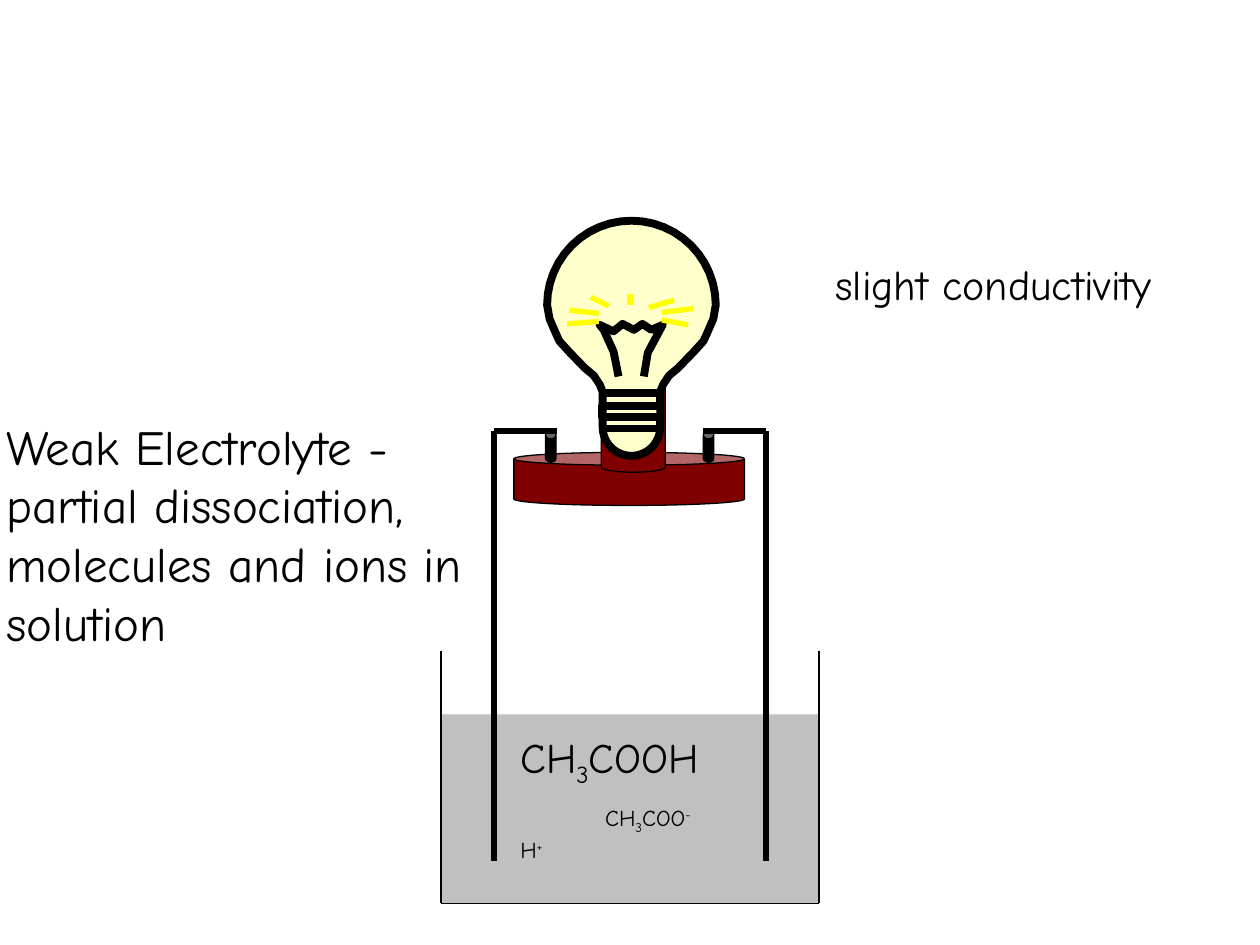
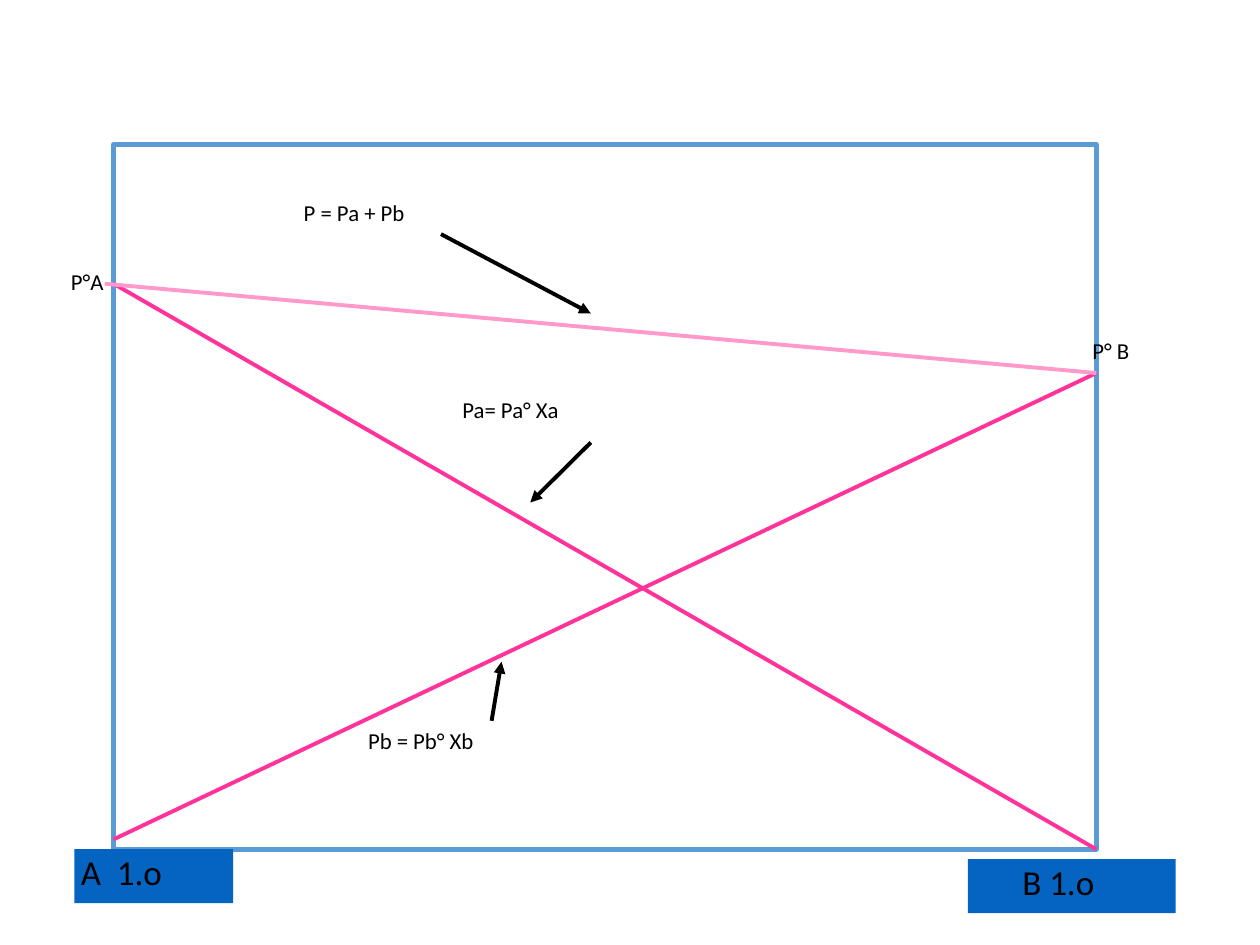
"""Build two chemistry slides: a weak electrolyte cell and a vapour pressure diagram."""
from math import cos, pi, sin

from lxml.etree import SubElement
from pptx import Presentation
from pptx.dml.color import RGBColor
from pptx.enum.shapes import MSO_CONNECTOR, MSO_SHAPE
from pptx.enum.text import MSO_ANCHOR, PP_ALIGN
from pptx.oxml.ns import qn
from pptx.util import Cm, Pt

BLACK = RGBColor(0x00, 0x00, 0x00)
MAROON = RGBColor(0x80, 0x00, 0x00)
GLASS = RGBColor(0xFF, 0xFF, 0xCC)
LIQUID = RGBColor(0xC0, 0xC0, 0xC0)
GLOW = RGBColor(0xFF, 0xFF, 0x00)
FRAME_BLUE = RGBColor(0x5B, 0x9B, 0xD5)
LABEL_BLUE = RGBColor(0x05, 0x63, 0xC1)
PINK = RGBColor(0xFF, 0x33, 0x99)
LIGHT_PINK = RGBColor(0xFF, 0x99, 0xCC)

CELL_FONT = "Comic Neue"
DIAGRAM_FONT = "Calibri"
INSET = 0.13
SUB, SUPER = -25, 30

CANS = [
    ((10.36, 9.12, 4.65, 1.07), 0.26, MAROON),
    ((12.12, 7.54, 1.29, 1.98), 0.2, MAROON),
    ((11.0, 8.69, 0.21, 0.63), 0.16, BLACK),
    ((14.18, 8.69, 0.21, 0.63), 0.16, BLACK),
]
BULB_CENTRE = 12.73
BULB_TOP = (6.15, 1.7)
BULB_FOOT = (8.61, 0.58)
BULB_NECK = [(1.65, 6.43), (1.52, 6.73), (1.45, 6.88), (1.24, 7.11),
             (0.94, 7.42), (0.76, 7.57), (0.64, 7.75), (0.58, 7.9)]
FILAMENT = [(12.47, 7.59), (12.37, 7.09), (12.17, 6.65), (12.09, 6.55),
            (12.37, 6.68), (12.55, 6.53), (12.78, 6.65), (12.95, 6.53),
            (13.13, 6.65), (13.36, 6.55), (13.06, 7.11), (12.98, 7.59)]
THREAD_LEVELS = [7.92, 8.18, 8.41, 8.64]
THREAD_SIDES = (12.14, 13.31)
RAYS = [
    (13.34, 6.45, 13.87, 6.55), (13.34, 6.3, 13.97, 6.22),
    (12.07, 6.48, 11.43, 6.53), (12.07, 6.32, 11.48, 6.25),
    (12.27, 6.17, 11.91, 5.99), (12.7, 6.15, 12.7, 5.92),
    (13.08, 6.2, 13.59, 6.05),
]
BEAKER_LEFT, BEAKER_RIGHT = 8.89, 16.51
BEAKER_TOP, LIQUID_TOP, BEAKER_BOTTOM = 13.13, 14.4, 18.21
WIRE_TOP, WIRE_BOTTOM = 8.69, 17.35
WIRES = [(14.17, 15.44), (11.23, 9.96)]
CELL_TEXTS = [
    ((10.36, 14.61, 4.32, 1.57), 24, False, [[("CH", 0), ("3", SUB), ("COOH", 0)]]),
    ((12.07, 16.08, 2.24, 0.97), 13, False,
     [[("CH", 0), ("3", SUB), ("COO", 0), ("-", SUPER)]]),
    ((10.36, 16.71, 0.79, 0.89), 13, False, [[("H", 0), ("+", SUPER)]]),
    ((0, 8.26, 10.16, 5.77), 28, True,
     [[("Weak Electrolyte -", 0)], [("partial dissociation,", 0)],
      [("molecules and ions in solution", 0)]]),
    ((16.71, 5.08, 7.57, 1.42), 24, False, [[("slight conductivity", 0)]]),
]

PLOT = (2.29, 2.92, 19.81, 14.2)
PRESSURES = [
    ((2.29, 5.72, 22.1, 17.12), PINK),
    ((22.1, 7.52, 2.29, 16.92), PINK),
    ((2.11, 5.72, 22.1, 7.52), LIGHT_PINK),
]
AXIS_LABELS = [
    ((1.5, 17.12, 3.2, 1.09), "A  1.o", INSET),
    ((19.51, 17.32, 4.19, 1.09), "B 1.o", 1.1),
]
DIAGRAM_TEXTS = [
    ((1.3, 5.33, 0.94, 0.79), "P°A", False),
    ((21.89, 6.73, 2.79, 0.79), "P° B", True),
    ((7.29, 14.58, 6.2, 0.79), "Pb = Pb° Xb", True),
    ((9.09, 7.92, 6.6, 0.79), " Pa= Pa° Xa", True),
    ((5.89, 3.94, 9.6, 0.79), " P = Pa + Pb", True),
]
ARROWS = [(9.91, 14.53, 10.11, 13.34), (11.91, 8.92, 10.69, 10.13),
          (8.89, 4.72, 11.91, 6.32)]


def paint(shape, fill=None, line=None, width=0.75):
    shape.shadow.inherit = False
    if fill is None:
        shape.fill.background()
    else:
        shape.fill.solid()
        shape.fill.fore_color.rgb = fill
    if line is None:
        shape.line.fill.background()
    else:
        shape.line.color.rgb = line
        shape.line.width = Pt(width)


def add_preset(page, kind, place, **look):
    shape = page.shapes.add_shape(kind, *map(Cm, place))
    paint(shape, **look)
    return shape


def add_line(page, ends, color, width, arrow=False):
    line = page.shapes.add_connector(MSO_CONNECTOR.STRAIGHT, *map(Cm, ends))
    line.line.color.rgb = color
    line.line.width = Pt(width)
    properties = line._element.spPr
    if arrow:
        SubElement(properties.find(qn("a:ln")), qn("a:tailEnd"), type="triangle")
    SubElement(properties, qn("a:effectLst"))


def add_outline(page, contours, close, **look):
    first, *others = [[(Cm(x), Cm(y)) for x, y in contour] for contour in contours]
    builder = page.shapes.build_freeform(*first[0])
    builder.add_line_segments(first[1:], close=close)
    for contour in others:
        builder.move_to(*contour[0])
        builder.add_line_segments(contour[1:], close=close)
    paint(builder.convert_to_shape(), **look)


def write(shape, paragraphs, font, size, wrap=True, spacing=None, left=INSET):
    frame = shape.text_frame
    frame.word_wrap = wrap
    frame.vertical_anchor = MSO_ANCHOR.TOP
    frame.margin_left = Cm(left)
    frame.margin_right = frame.margin_top = frame.margin_bottom = Cm(INSET)
    for index, spans in enumerate(paragraphs):
        para = frame.add_paragraph() if index else frame.paragraphs[0]
        para.alignment = PP_ALIGN.LEFT
        para.line_spacing = spacing
        for text, baseline in spans:
            span = para.add_run()
            span.text = text
            span.font.name = font
            span.font.size = Pt(size)
            span.font.color.rgb = BLACK
            if baseline:
                span._r.get_or_add_rPr().set("baseline", str(baseline * 1000))


def bulb_outline():
    def arc(centre, radius, start, steps=12):
        angles = [start + pi / 2 * step / steps for step in range(steps + 1)]
        return [(radius * cos(angle), centre + radius * sin(angle)) for angle in angles]

    half = arc(*BULB_TOP, -pi / 2) + BULB_NECK + arc(*BULB_FOOT, 0)
    right = [(BULB_CENTRE + x, y) for x, y in half]
    left = [(BULB_CENTRE - x, y) for x, y in reversed(half)]
    return right + left[1:-1]


def thread_outline():
    points = []
    for index, level in enumerate(THREAD_LEVELS):
        sides = THREAD_SIDES[::-1] if index % 2 else THREAD_SIDES
        points += [(side, level) for side in sides]
    return points


def build_cell(page):
    for place, lid, color in CANS:
        can = add_preset(page, MSO_SHAPE.CAN, place, fill=color, line=BLACK)
        can.adjustments[0] = lid / min(place[2:])
    add_outline(page, [bulb_outline()], True, fill=GLASS, line=BLACK, width=4.5)
    add_outline(page, [FILAMENT, thread_outline()], False, line=BLACK, width=4.5)

    add_preset(page, MSO_SHAPE.RECTANGLE,
               (BEAKER_LEFT, LIQUID_TOP, BEAKER_RIGHT - BEAKER_LEFT,
                BEAKER_BOTTOM - LIQUID_TOP), fill=LIQUID)
    for side in (BEAKER_LEFT, BEAKER_RIGHT):
        add_line(page, (side, BEAKER_TOP, side, BEAKER_BOTTOM), BLACK, 0.75)
    add_line(page, (BEAKER_LEFT, BEAKER_BOTTOM, BEAKER_RIGHT, BEAKER_BOTTOM), BLACK, 0.75)

    for inner, outer in WIRES:
        add_line(page, (inner, WIRE_TOP, outer, WIRE_TOP), BLACK, 3)
        add_line(page, (outer, WIRE_TOP, outer, WIRE_BOTTOM), BLACK, 3)
    for ray in RAYS:
        add_line(page, ray, GLOW, 3)
    for place, size, wrap, paragraphs in CELL_TEXTS:
        box = page.shapes.add_textbox(*map(Cm, place))
        write(box, paragraphs, CELL_FONT, size, wrap)


def build_diagram(page):
    add_preset(page, MSO_SHAPE.RECTANGLE, PLOT, line=FRAME_BLUE, width=3)
    for ends, color in PRESSURES:
        add_line(page, ends, color, 2.25)
    for place, text, left in AXIS_LABELS:
        label = add_preset(page, MSO_SHAPE.RECTANGLE, place, fill=LABEL_BLUE)
        write(label, [[(text, 0)]], DIAGRAM_FONT, 20, spacing=0.9, left=left)
    for place, text, wrap in DIAGRAM_TEXTS:
        box = page.shapes.add_textbox(*map(Cm, place))
        write(box, [[(text, 0)]], DIAGRAM_FONT, 13, wrap, spacing=0.9)
    for ends in ARROWS:
        add_line(page, ends, BLACK, 2.25, arrow=True)


def main():
    deck = Presentation()
    deck.slide_width, deck.slide_height = Cm(25.4), Cm(19.05)
    for build in (build_cell, build_diagram):
        build(deck.slides.add_slide(deck.slide_layouts[6]))
    deck.save("out.pptx")


if __name__ == "__main__":
    main()
